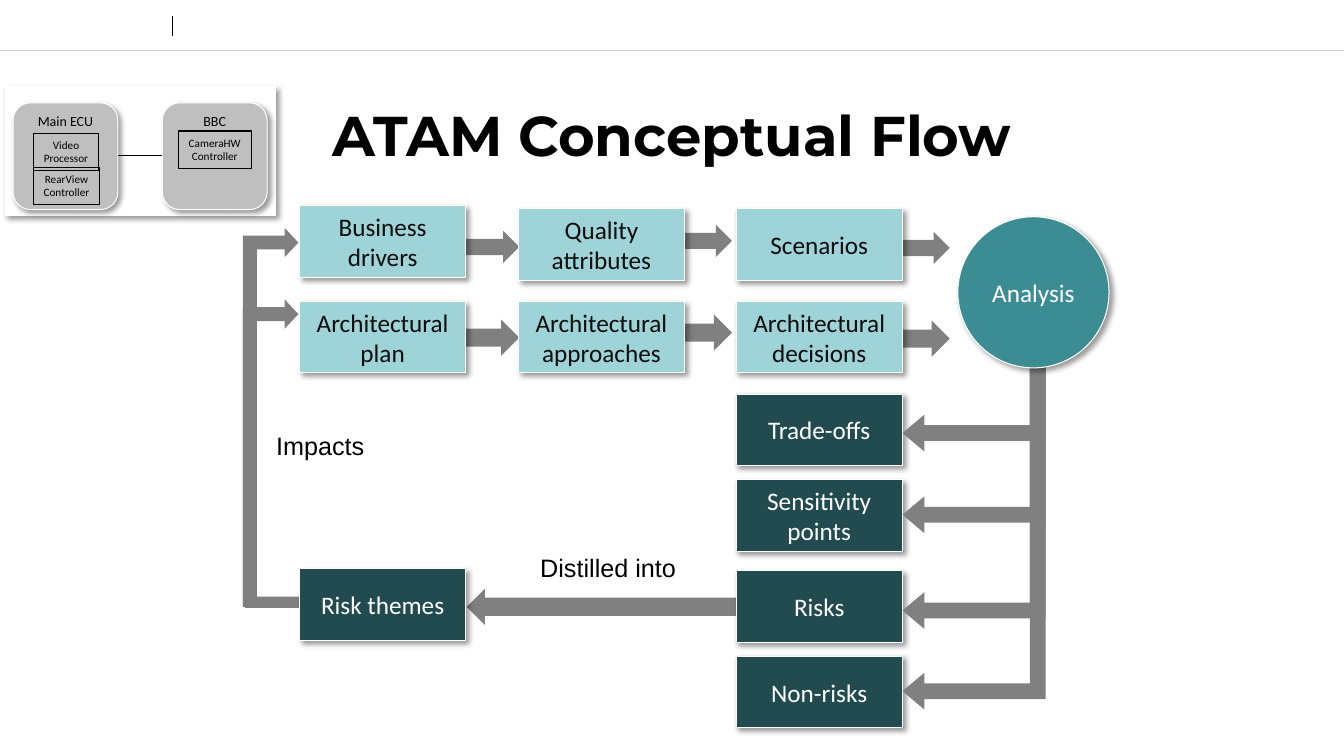
from dataclasses import dataclass

from lxml import etree
from pptx import Presentation
from pptx.dml.color import RGBColor
from pptx.enum.shapes import MSO_CONNECTOR, MSO_SHAPE
from pptx.enum.text import MSO_ANCHOR, PP_ALIGN
from pptx.oxml.ns import qn
from pptx.util import Inches, Pt

RECTANGLE = MSO_SHAPE.RECTANGLE
ROUNDED = MSO_SHAPE.ROUNDED_RECTANGLE
OVAL = MSO_SHAPE.OVAL
RIGHT_ARROW = MSO_SHAPE.RIGHT_ARROW
LEFT_ARROW = MSO_SHAPE.LEFT_ARROW
BENT_ARROW = MSO_SHAPE.BENT_UP_ARROW
STRAIGHT = MSO_CONNECTOR.STRAIGHT
TOP = MSO_ANCHOR.TOP
MIDDLE = MSO_ANCHOR.MIDDLE
CENTER = PP_ALIGN.CENTER
LEFT = PP_ALIGN.LEFT


@dataclass(frozen=True)
class Theme:
    """Colours, fonts and type sizes of the slide."""
    black: str = "000000"
    white: str = "FFFFFF"
    ink: str = "0D0D0D"
    arrow: str = "808080"
    unit: str = "BFBFBF"
    rule: str = "CCCCCC"
    source: str = "9ED3D7"
    result: str = "224B50"
    analysis: str = "3C8C93"
    title_font: str = "Montserrat"
    box_font: str = "Calibri"
    label_font: str = "Arial"
    title_size: int = 40
    body_size: int = 18
    unit_size: int = 10
    part_size: int = 8


THEME = Theme()
COLUMNS = (2.97, 5.14, 7.3)
BOX_SIZE = (1.65, 0.71)


def color(value):
    """Return the RGB colour of a hex string."""
    return RGBColor.from_string(value)


def write(shape, lines, font, size, ink, align=CENTER, anchor=MIDDLE, wrap=True):
    """Fill a shape with one formatted paragraph per line."""
    frame = shape.text_frame
    frame.text = "\n".join(lines)
    frame.word_wrap = wrap
    frame.vertical_anchor = anchor
    for paragraph in frame.paragraphs:
        paragraph.alignment = align
        paragraph.font.name = font
        paragraph.font.size = Pt(size)
        paragraph.font.color.rgb = color(ink)


def add_figure(slide, kind, bounds, fill=None, line=None):
    """Add a preset shape without shadow, filled and outlined as asked."""
    shape = slide.shapes.add_shape(kind, *map(Inches, bounds))
    shape.shadow.inherit = False
    if fill:
        shape.fill.solid()
        shape.fill.fore_color.rgb = color(fill)
    else:
        shape.fill.background()
    if line:
        shape.line.color.rgb = color(line)
        shape.line.width = Pt(0.75)
    else:
        shape.line.fill.background()
    return shape


def add_raised(slide, kind, bounds, fill):
    """Add a white-edged shape with a soft shadow."""
    shape = add_figure(slide, kind, bounds, fill, THEME.white)
    effects = shape._element.spPr.find(qn("a:effectLst"))
    shadow = etree.SubElement(effects, qn("a:outerShdw"), blurRad=str(Pt(4)),
                              dist=str(Pt(3)), dir="2700000", rotWithShape="0")
    tint = etree.SubElement(shadow, qn("a:srgbClr"), val=THEME.black)
    etree.SubElement(tint, qn("a:alpha"), val="40000")
    return shape


def add_box(slide, left, top, text, fill, ink):
    """Add one step of the flow."""
    box = add_raised(slide, RECTANGLE, (left, top, *BOX_SIZE), fill)
    write(box, [text], THEME.box_font, THEME.body_size, ink)


def add_elbow(slide, bounds, rotation, adjustments):
    """Add a turned bent arrow that covers the given bounds on the slide."""
    left, top, width, height = bounds
    shift = (height - width) / 2
    arrow = add_figure(slide, BENT_ARROW, (left - shift, top + shift, height, width), THEME.arrow)
    arrow.rotation = rotation
    arrow._element.spPr.xfrm.set("flipH", "1")
    for index, value in enumerate(adjustments):
        arrow.adjustments[index] = value


def add_label(slide, bounds, text):
    """Add a free label beside an arrow."""
    label = slide.shapes.add_textbox(*map(Inches, bounds))
    write(label, [text], THEME.label_font, THEME.body_size, THEME.black, LEFT, TOP, False)


def add_line(slide, start, end, ink, width):
    """Add a straight line without shadow."""
    line = slide.shapes.add_connector(STRAIGHT, *map(Inches, (*start, *end)))
    line.line.color.rgb = color(ink)
    line.line.width = Pt(width)
    etree.SubElement(line._element.spPr, qn("a:effectLst"))


def add_title(slide, text):
    """Place and format the title."""
    title = slide.shapes.title
    title.left, title.top, title.width, title.height = map(Inches, (0, 0.92, 13.33, 0.83))
    write(title, [text], THEME.title_font, THEME.title_size, THEME.black)
    title.text_frame.paragraphs[0].font.bold = True


def add_unit(slide, left, name, parts):
    """Add a hardware unit with its software parts."""
    unit = add_raised(slide, ROUNDED, (left, 1.02, 1.04, 1.06), THEME.unit)
    write(unit, [name], THEME.box_font, THEME.unit_size, THEME.black, anchor=TOP)
    for part_left, top, width, lines in parts:
        part = add_figure(slide, RECTANGLE, (part_left, top, width, 0.37), line=THEME.black)
        write(part, lines, THEME.box_font, THEME.part_size, THEME.black, anchor=TOP, wrap=False)


def add_system_inset(slide):
    """Add the small system diagram in the corner."""
    add_raised(slide, RECTANGLE, (0.05, 0.86, 2.68, 1.28), THEME.white)
    add_unit(slide, 1.61, "BBC", [(1.77, 1.3, 0.72, ["CameraHW", "Controller"])])
    add_unit(slide, 0.13, "Main ECU", [
        (0.33, 1.32, 0.65, ["Video", "Processor"]),
        (0.33, 1.66, 0.66, ["RearView", "Controller"]),
    ])
    add_line(slide, (1.61, 1.54), (1.17, 1.54), THEME.black, 0.75)


def add_impacts(slide):
    """Add the feedback path from the risk themes to the inputs."""
    for top in (2.97, 2.26):
        add_elbow(slide, (2.41, top, 0.55, 6.02 - top), 90, (0.25, 0.265, 0.25))
    add_figure(slide, RECTANGLE, (2.43, 5.92, 1.02, 0.11), THEME.arrow)
    add_label(slide, (2.64, 4.22, 1.09, 0.33), "Impacts")


def add_inputs(slide):
    """Add the two rows that lead to the analysis."""
    for left, tops in zip((4.46, 6.57, 8.73), ((2.29, 3.17), (2.23, 3.12), (2.3, 3.18))):
        for top, height in zip(tops, (0.32, 0.36)):
            add_figure(slide, RIGHT_ARROW, (left, top, 0.69, height), THEME.arrow)
    business = zip(COLUMNS, (2.04, 2.07, 2.07),
                   ("Business drivers", "Quality attributes", "Scenarios"))
    architecture = zip(COLUMNS, (2.99,) * 3, ("Architectural plan", "Architectural approaches",
                                              "Architectural decisions"))
    for left, top, text in (*business, *architecture):
        add_box(slide, left, top, text, THEME.source, THEME.ink)


def add_results(slide):
    """Add the analysis and the results that come out of it."""
    add_figure(slide, LEFT_ARROW, (4.63, 5.84, 3.07, 0.36), THEME.arrow)
    add_label(slide, (5.26, 5.43, 1.56, 0.4), "Distilled into")
    results = ((3.91, "Trade-offs"), (4.76, "Sensitivity points"),
               (5.66, "Risks"), (6.51, "Non-risks"))
    for top, text in results:
        add_box(slide, COLUMNS[2], top, text, THEME.result, THEME.white)
    add_box(slide, COLUMNS[0], 5.64, "Risk themes", THEME.result, THEME.white)
    for top, bottom in ((2.39, 7.04), (2.99, 5.29), (2.99, 6.24), (2.36, 4.48)):
        add_elbow(slide, (8.95, top, 1.42, bottom - top), 270, (0.11, 0.129, 0.154))
    analysis = add_raised(slide, OVAL, (9.5, 2.15, 1.5, 1.5), THEME.analysis)
    write(analysis, ["Analysis"], THEME.box_font, THEME.body_size, THEME.white)


def main():
    """Build the slide and save it."""
    presentation = Presentation()
    presentation.slide_width = Inches(13.33)
    presentation.slide_height = Inches(7.5)
    slide = presentation.slides.add_slide(presentation.slide_layouts[5])
    add_line(slide, (0, 0.5), (13.33, 0.5), THEME.rule, 0.25)
    add_line(slide, (1.71, 0.16), (1.71, 0.36), THEME.black, 0.5)
    add_title(slide, "ATAM Conceptual Flow")
    add_impacts(slide)
    add_inputs(slide)
    add_results(slide)
    add_system_inset(slide)
    presentation.save("out.pptx")


if __name__ == "__main__":
    main()
